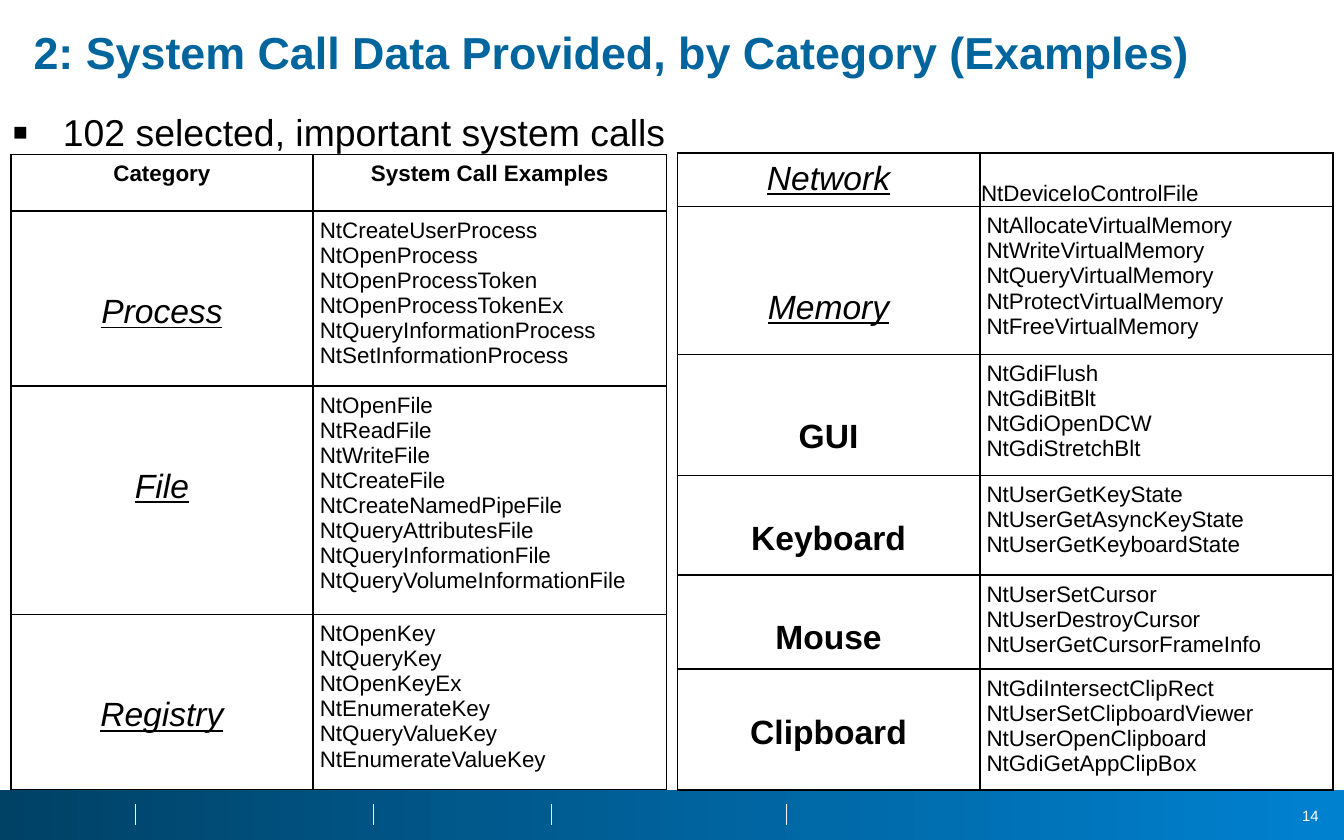
from lxml import etree
from pptx import Presentation
from pptx.dml.color import RGBColor
from pptx.enum.shapes import MSO_CONNECTOR, MSO_SHAPE
from pptx.enum.text import MSO_ANCHOR, MSO_AUTO_SIZE, PP_ALIGN
from pptx.oxml.ns import qn
from pptx.util import Inches, Pt

LEFT, CENTER, RIGHT = PP_ALIGN.LEFT, PP_ALIGN.CENTER, PP_ALIGN.RIGHT
TOP, MIDDLE, BOTTOM = MSO_ANCHOR.TOP, MSO_ANCHOR.MIDDLE, MSO_ANCHOR.BOTTOM
NO_FIT = MSO_AUTO_SIZE.NONE
RECTANGLE, STRAIGHT = MSO_SHAPE.RECTANGLE, MSO_CONNECTOR.STRAIGHT

WIDTH, HEIGHT = Inches(10), Inches(6.25)
COLORS = {"title": "00649D", "text": "000000", "white": "FFFFFF",
          "divider": "F2F2F2", "bar_dark": "004266", "bar_light": "0081D0"}
MARGINS = ("margin_left", "margin_top", "margin_right", "margin_bottom")

HEADER = {"size": Pt(12), "bold": True}
LINKED = {"size": Pt(18), "italic": True, "underline": True}
STRONG = {"size": Pt(18), "bold": True}
CALLS = {"size": Pt(12)}

COLUMN_SHARES = (22.5, 26.3)
LEFT_ROWS = [
    (6.75, "Category", HEADER, 1, ["System Call Examples"]),
    (19.5, "Process", LINKED, 3,
     ["NtCreateUserProcess", "NtOpenProcess", "NtOpenProcessToken",
      "NtOpenProcessTokenEx", "NtQueryInformationProcess", "NtSetInformationProcess"]),
    (25.5, "File", LINKED, 3,
     ["NtOpenFile", "NtReadFile", "NtWriteFile", "NtCreateFile",
      "NtCreateNamedPipeFile", "NtQueryAttributesFile",
      "NtQueryInformationFile", "NtQueryVolumeInformationFile"]),
    (19.5, "Registry", LINKED, 3,
     ["NtOpenKey", "NtQueryKey", "NtOpenKeyEx", "NtEnumerateKey",
      "NtQueryValueKey", "NtEnumerateValueKey"]),
]
RIGHT_ROWS = [
    (6.1, "Network", LINKED, 1, ["NtDeviceIoControlFile"]),
    (17.15, "Memory", LINKED, 3,
     ["NtAllocateVirtualMemory", "NtWriteVirtualMemory", "NtQueryVirtualMemory",
      "NtProtectVirtualMemory", "NtFreeVirtualMemory"]),
    (14.1, "GUI", STRONG, 2.5,
     ["NtGdiFlush", "NtGdiBitBlt", "NtGdiOpenDCW", "NtGdiStretchBlt"]),
    (11.85, "Keyboard", STRONG, 2,
     ["NtUserGetKeyState", "NtUserGetAsyncKeyState", "NtUserGetKeyboardState"]),
    (10.55, "Mouse", STRONG, 2,
     ["NtUserSetCursor", "NtUserDestroyCursor", "NtUserGetCursorFrameInfo"]),
    (13.55, "Clipboard", STRONG, 2,
     ["NtGdiIntersectClipRect", "NtUserSetClipboardViewer",
      "NtUserOpenClipboard", "NtGdiGetAppClipBox"]),
]


def across(percent):
    return round(WIDTH * percent / 100)


def down(percent):
    return round(HEIGHT * percent / 100)


def box(left, top, width, height):
    return across(left), down(top), across(width), down(height)


def set_values(target, values):
    for name, value in values.items():
        setattr(target, name, value)


def set_margins(target, *inches):
    set_values(target, {name: Inches(value) for name, value in zip(MARGINS, inches)})


def write(frame, lines, font, color="text", align=LEFT, spacing=1):
    for index, line in enumerate(lines):
        paragraph = frame.paragraphs[0] if index == 0 else frame.add_paragraph()
        set_values(paragraph, {"alignment": align, "line_spacing": spacing})
        run = paragraph.add_run()
        run.text = line
        set_values(run.font, {"name": "Arial", "bold": False, **font})
        run.font.color.rgb = RGBColor.from_string(COLORS[color])


def add_footer(slide):
    bar = slide.shapes.add_shape(RECTANGLE, *box(0, 94, 100, 6))
    bar.shadow.inherit = False
    bar.line.fill.background()
    bar.fill.gradient()
    bar.fill.gradient_angle = 0
    for stop, name in zip(bar.fill.gradient_stops, ("bar_dark", "bar_light")):
        stop.color.rgb = RGBColor.from_string(COLORS[name])
    for column in (10.1, 27.8, 41, 58.5):
        divider = slide.shapes.add_connector(
            STRAIGHT, across(column), down(95.7), across(column), down(98.2))
        divider.line.width = Pt(0.25)
        divider.line.color.rgb = RGBColor.from_string(COLORS["divider"])
        etree.SubElement(divider._element.spPr, qn("a:effectLst"))
    number = slide.shapes.add_textbox(*box(94.9, 95.2, 4.2, 3.8)).text_frame
    set_values(number, {"word_wrap": True, "vertical_anchor": MIDDLE})
    write(number, ["14"], {"size": Pt(8)}, "white", RIGHT)


def add_title(slide, text):
    title = slide.shapes.title
    set_values(title, dict(zip(("left", "top", "width", "height"),
                               box(2, 3.2, 100.5, 6.7))))
    frame = title.text_frame
    set_values(frame, {"auto_size": NO_FIT, "vertical_anchor": MIDDLE, "word_wrap": True})
    set_margins(frame, 0.05, 0.05, 0.05, 0.05)
    write(frame, [text], {"size": Pt(24), "bold": True}, "title", spacing=0.9)


def add_bullet(slide, text):
    frame = slide.shapes.add_textbox(*box(0, 9.6, 51.7, 9.8)).text_frame
    frame.word_wrap = True
    write(frame, [text], {"size": Pt(20)}, spacing=1.5)
    properties = frame.paragraphs[0]._p.get_or_add_pPr()
    properties.set("marL", str(Inches(0.37)))
    properties.set("indent", str(Inches(-0.39)))
    color = etree.SubElement(properties, qn("a:buClr"))
    etree.SubElement(color, qn("a:srgbClr"), val=COLORS["text"])
    etree.SubElement(properties, qn("a:buSzPct"), val="65000")
    etree.SubElement(properties, qn("a:buFont"), typeface="Arial")
    etree.SubElement(properties, qn("a:buChar"), char="■")


def format_cell(cell):
    set_margins(cell, 0.05, 0.05, 0.05, 0.05)
    cell.vertical_anchor = TOP
    properties = cell._tc.get_or_add_tcPr()
    for side in ("lnL", "lnR", "lnT", "lnB"):
        border = etree.SubElement(properties, qn(f"a:{side}"), w=str(Pt(1)))
        fill = etree.SubElement(border, qn("a:solidFill"))
        etree.SubElement(fill, qn("a:srgbClr"), val=COLORS["text"])
    cell.fill.background()


def add_call_table(slide, left, top, rows):
    frame = slide.shapes.add_table(
        len(rows), 2, *box(left, top, sum(COLUMN_SHARES), sum(row[0] for row in rows)))
    table = frame.table
    set_values(table, {"first_row": False, "horz_banding": False})
    for column, share in zip(table.columns, COLUMN_SHARES):
        column.width = across(share)
    for index, (height, category, font, spacing, calls) in enumerate(rows):
        table.rows[index].height = down(height)
        name_cell, calls_cell = table.cell(index, 0), table.cell(index, 1)
        format_cell(name_cell)
        format_cell(calls_cell)
        write(name_cell.text_frame, [category], font, align=CENTER, spacing=spacing)
        is_header = font is HEADER
        write(calls_cell.text_frame, calls, HEADER if is_header else CALLS,
              align=CENTER if is_header else LEFT)
    return table


def main():
    presentation = Presentation()
    set_values(presentation, {"slide_width": WIDTH, "slide_height": HEIGHT})
    slide = presentation.slides.add_slide(presentation.slide_layouts[5])
    add_footer(slide)
    add_title(slide, "2: System Call Data Provided, by Category (Examples)")
    add_call_table(slide, 0.8, 18.4, LEFT_ROWS)
    network_table = add_call_table(slide, 50.4, 18.2, RIGHT_ROWS)
    network_calls = network_table.cell(0, 1)
    set_margins(network_calls, 0.01, 0.01, 0.01, 0)
    network_calls.vertical_anchor = BOTTOM
    add_bullet(slide, "102 selected, important system calls")
    presentation.save("out.pptx")


if __name__ == "__main__":
    main()
